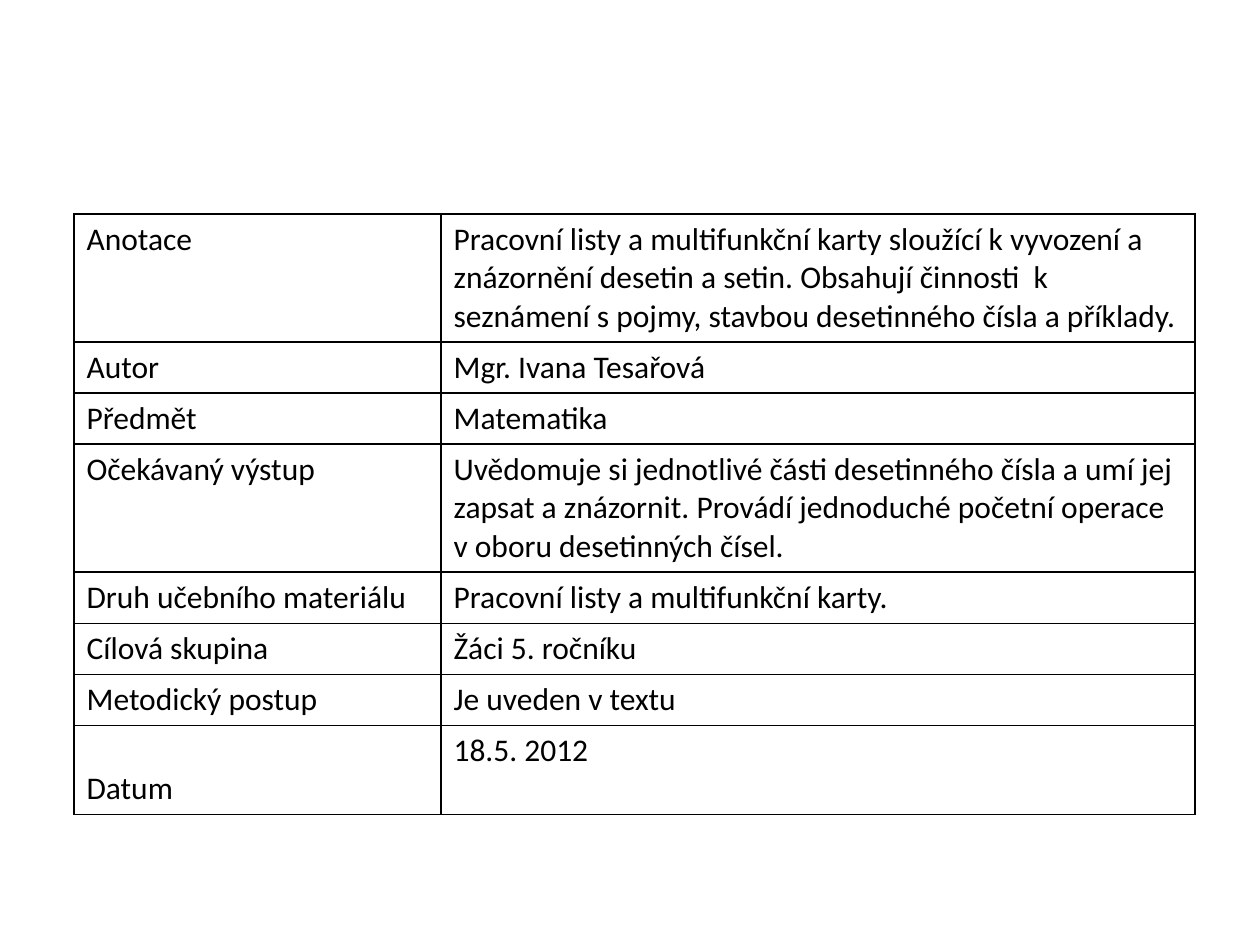
from lxml.etree import SubElement
from pptx import Presentation
from pptx.dml.color import RGBColor as RGB
from pptx.enum.text import MSO_ANCHOR as Anchor
from pptx.oxml.ns import qn
from pptx.util import Pt

SCALE = 914400 / 126
BLACK = RGB(0, 0, 0)
FONT = "Calibri"
COLS = (367, 754)
ROWS = (
    (128, "Anotace", "Pracovní listy a multifunkční karty sloužící k vyvození a "
     "znázornění desetin a setin. Obsahují činnosti  k seznámení s pojmy, "
     "stavbou desetinného čísla a příklady."),
    (51, "Autor", "Mgr. Ivana Tesařová"),
    (51, "Předmět", "Matematika"),
    (128, "Očekávaný výstup", "Uvědomuje si jednotlivé části desetinného čísla a "
     "umí jej zapsat a znázornit. Provádí jednoduché početní operace "
     "v oboru desetinných čísel."),
    (51, "Druh učebního materiálu", "Pracovní listy a multifunkční karty."),
    (51, "Cílová skupina", "Žáci 5. ročníku"),
    (51, "Metodický postup", "Je uveden v textu"),
    (89, "Datum", "18.5. 2012"),
)


def px(num):
    """Turn px into EMU."""
    return round(num * SCALE)


def frame(cell):
    """Draw a thin black border on all sides of a cell."""
    props = cell._tc.get_or_add_tcPr()
    for side in ("lnL", "lnR", "lnT", "lnB"):
        line = SubElement(props, qn(f"a:{side}"), w=str(Pt(1)))
        fill = SubElement(line, qn("a:solidFill"))
        SubElement(fill, qn("a:srgbClr"), val=str(BLACK))


def write(cell, text):
    """Put text into a framed cell without fill."""
    frame(cell)
    cell.fill.background()
    cell.text_frame.text = text
    font = cell.text_frame.paragraphs[0].runs[0].font
    font.name, font.size, font.color.rgb = FONT, Pt(18), BLACK


def add_facts(slide, left, top):
    """Place the table of facts about the teaching material."""
    high = sum(row[0] for row in ROWS)
    box = [px(num) for num in (left, top, sum(COLS), high)]
    table = slide.shapes.add_table(len(ROWS), len(COLS), *box).table
    table.first_row = table.horz_banding = False
    for col, width in zip(table.columns, COLS):
        col.width = px(width)
    for row, (height, *texts) in zip(table.rows, ROWS):
        row.height = px(height)
        for cell, text in zip(row.cells, texts):
            write(cell, text)
    table.cell(len(ROWS) - 1, 0).vertical_anchor = Anchor.BOTTOM


def main():
    """Build and save the slide."""
    deck = Presentation()
    deck.slide_width, deck.slide_height = px(1260), px(945)
    slide = deck.slides.add_slide(deck.slide_layouts[6])
    add_facts(slide, 74, 214)
    deck.save("out.pptx")


if __name__ == "__main__":
    main()
